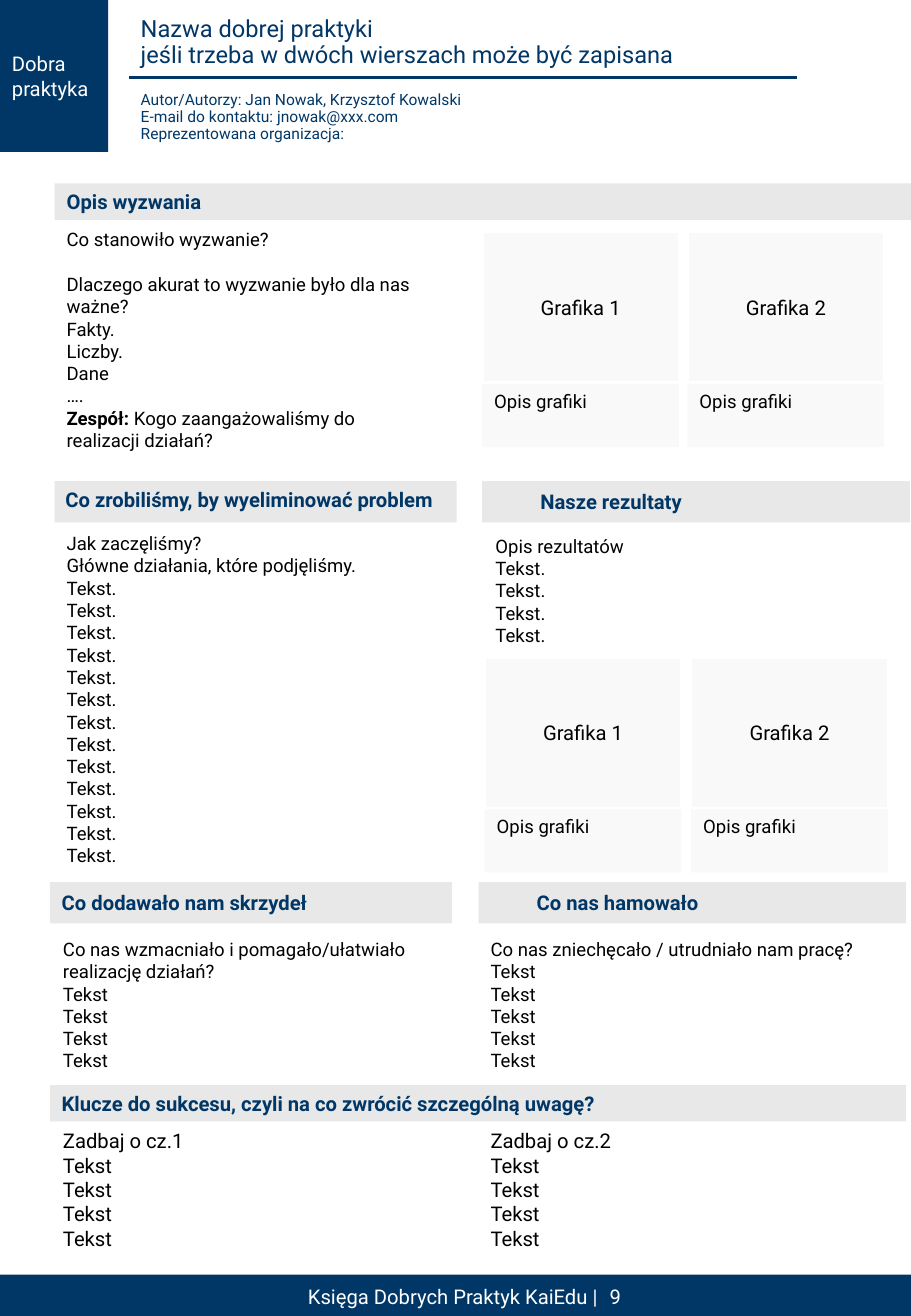
from lxml.etree import SubElement
from pptx import Presentation
from pptx.dml.color import RGBColor
from pptx.enum.shapes import MSO_CONNECTOR as Connector, MSO_SHAPE as Shape
from pptx.enum.text import MSO_ANCHOR as Anchor, MSO_AUTO_SIZE as AutoSize, PP_ALIGN as Align
from pptx.oxml.ns import qn
from pptx.util import Inches, Pt

COLORS = {"navy": "013766", "band": "E8E8E8", "card": "F9F9F9", "white": "FFFFFF", "black": "000000"}
FONT = "Roboto"

SECTIONS = [
    ((0.45, 1.51, 7.05, 0.30), "Opis wyzwania", (0.45, 1.51, 1.34)),
    ((0.45, 3.96, 3.31, 0.34), "Co zrobiliśmy, by wyeliminować problem", (0.44, 3.96, 3.31)),
    ((3.97, 3.96, 3.52, 0.34), "Nasze rezultaty", (4.35, 3.98, 1.38)),
    ((0.41, 7.26, 3.31, 0.34), "Co dodawało nam skrzydeł", (0.41, 7.28, 2.25)),
    ((3.94, 7.26, 3.52, 0.34), "Co nas hamowało", (4.32, 7.28, 1.57)),
    ((0.41, 8.93, 7.05, 0.30), "Klucze do sukcesu, czyli na co zwrócić szczególną uwagę?", (0.41, 8.93, 4.63)),
]


def rgb(color):
    """Return the named colour."""
    return RGBColor.from_string(COLORS[color])


def format_runs(paragraph, size, color, bold=False):
    """Apply the slide font to every run of a paragraph."""
    for run in paragraph.runs:
        run.font.name = FONT
        run.font.size = Pt(size)
        run.font.bold = bold
        run.font.color.rgb = rgb(color)


def write(holder, lines, size=11, color="black", bold=False, align=Align.LEFT, anchor=Anchor.TOP, spacing=1.0):
    """Put lines into a shape, one paragraph each, and return its text frame."""
    frame = holder.text_frame
    frame.word_wrap = True
    frame.vertical_anchor = anchor
    frame.text = "\n".join(lines)
    for paragraph in frame.paragraphs:
        paragraph.alignment = align
        paragraph.line_spacing = spacing
        format_runs(paragraph, size, color, bold)
    return frame


def add_text(slide, box, lines, **style):
    """Add a wrapped text box."""
    return write(slide.shapes.add_textbox(*map(Inches, box)), lines, **style)


def add_panel(slide, box, fill, outline=None):
    """Add a flat rectangle."""
    panel = slide.shapes.add_shape(Shape.RECTANGLE, *map(Inches, box))
    panel.shadow.inherit = False
    panel.fill.solid()
    panel.fill.fore_color.rgb = rgb(fill)
    if outline:
        panel.line.color.rgb = rgb(outline)
        panel.line.width = Pt(1.5)
    else:
        panel.line.fill.background()
    return panel


def add_rule(slide, left, right, top):
    """Add the navy line under the title."""
    rule = slide.shapes.add_connector(Connector.STRAIGHT, *map(Inches, (left, top, right, top)))
    rule.line.color.rgb = rgb("navy")
    rule.line.width = Pt(1.5)
    SubElement(rule.element.spPr, qn("a:effectLst"))


def add_section(slide, band, heading, place):
    """Add a grey band with its bold heading."""
    add_panel(slide, band, "band")
    frame = add_text(slide, (*place, 0.3), [heading], size=12, color="navy", bold=True)
    frame.word_wrap = False
    frame.auto_size = AutoSize.SHAPE_TO_FIT_TEXT


def add_graphics(slide, left, top, step):
    """Add two graphic placeholders with captions."""
    for index in range(2):
        x = left + index * step
        graphic = add_panel(slide, (x, top, 1.62, 1.24), "card", "white")
        write(graphic, [f"Grafika {index + 1}"], size=12, align=Align.CENTER, anchor=Anchor.MIDDLE)
        caption = add_panel(slide, (x, top + 1.25, 1.62, 0.52), "card")
        write(caption, ["Opis grafiki"])


def add_header(slide):
    """Add the corner label, title and author details."""
    label = add_panel(slide, (0, 0, 0.89, 1.25), "navy")
    write(label, ["Dobra", "praktyka"], size=12, color="white", anchor=Anchor.MIDDLE)
    add_rule(slide, 1.06, 6.56, 0.64)
    title = "Nazwa dobrej praktyki\vjeśli trzeba w dwóch wierszach może być zapisana"
    add_text(slide, (1.06, 0.14, 4.83, 0.43), [title], size=14, color="navy", anchor=Anchor.MIDDLE, spacing=0.9)
    details = ["Autor/Autorzy: Jan Nowak, Krzysztof Kowalski", "E-mail do kontaktu: jnowak@xxx.com",
               "Reprezentowana organizacja:"]
    add_text(slide, (1.06, 0.71, 4.82, 0.54), details, size=9.2, color="navy", spacing=0.9)


def add_challenge(slide):
    """Add the challenge description and the team line."""
    lines = ["Co stanowiło wyzwanie?", "Dlaczego akurat to wyzwanie było dla nas ważne?",
             "Fakty.", "Liczby.", "Dane", "….", "Zespół: "]
    paragraphs = add_text(slide, (0.45, 1.83, 3.06, 1.84), lines).paragraphs
    paragraphs[0].space_after = Pt(13.2)
    team = paragraphs[-1]
    team.add_run().text = "Kogo zaangażowaliśmy do realizacji działań?"
    format_runs(team, 11, "black")
    team.runs[0].font.bold = True


def add_footer(slide):
    """Add the footer bar and page number."""
    bar = add_panel(slide, (0, 10.49, 7.5, 0.35), "navy")
    write(bar, ["Księga Dobrych Praktyk KaiEdu | "], size=12, color="white",
          align=Align.CENTER, anchor=Anchor.MIDDLE)
    add_text(slide, (4.92, 10.49, 0.41, 0.35), ["9"], size=12, color="white", anchor=Anchor.MIDDLE)


def main():
    """Build the good practice sheet."""
    deck = Presentation()
    deck.slide_width, deck.slide_height = Inches(7.5), Inches(10.83)
    slide = deck.slides.add_slide(deck.slide_layouts[6])
    add_header(slide)
    for section in SECTIONS:
        add_section(slide, *section)
    add_challenge(slide)
    add_graphics(slide, 3.97, 1.91, 1.69)
    actions = ["Jak zaczęliśmy?", "Główne działania, które podjęliśmy."] + ["Tekst."] * 13
    add_text(slide, (0.45, 4.35, 3.06, 2.81), actions, anchor=Anchor.MIDDLE)
    add_text(slide, (3.98, 4.35, 3.52, 0.52), ["Opis rezultatów"] + ["Tekst."] * 4)
    add_graphics(slide, 3.99, 5.41, 1.7)
    boosts = ["Co nas wzmacniało i pomagało/ułatwiało realizację działań?"] + ["Tekst"] * 4
    add_text(slide, (0.42, 7.67, 3.3, 1.17), boosts)
    obstacles = ["Co nas zniechęcało / utrudniało nam pracę?"] + ["Tekst"] * 5
    add_text(slide, (3.94, 7.67, 3.52, 1.17), obstacles)
    for number, left in enumerate((0.42, 3.94), 1):
        add_text(slide, (left, 9.24, 3.3, 1.17), [f"Zadbaj o cz.{number}"] + ["Tekst"] * 4, size=12)
    add_footer(slide)
    deck.save("out.pptx")


if __name__ == "__main__":
    main()
